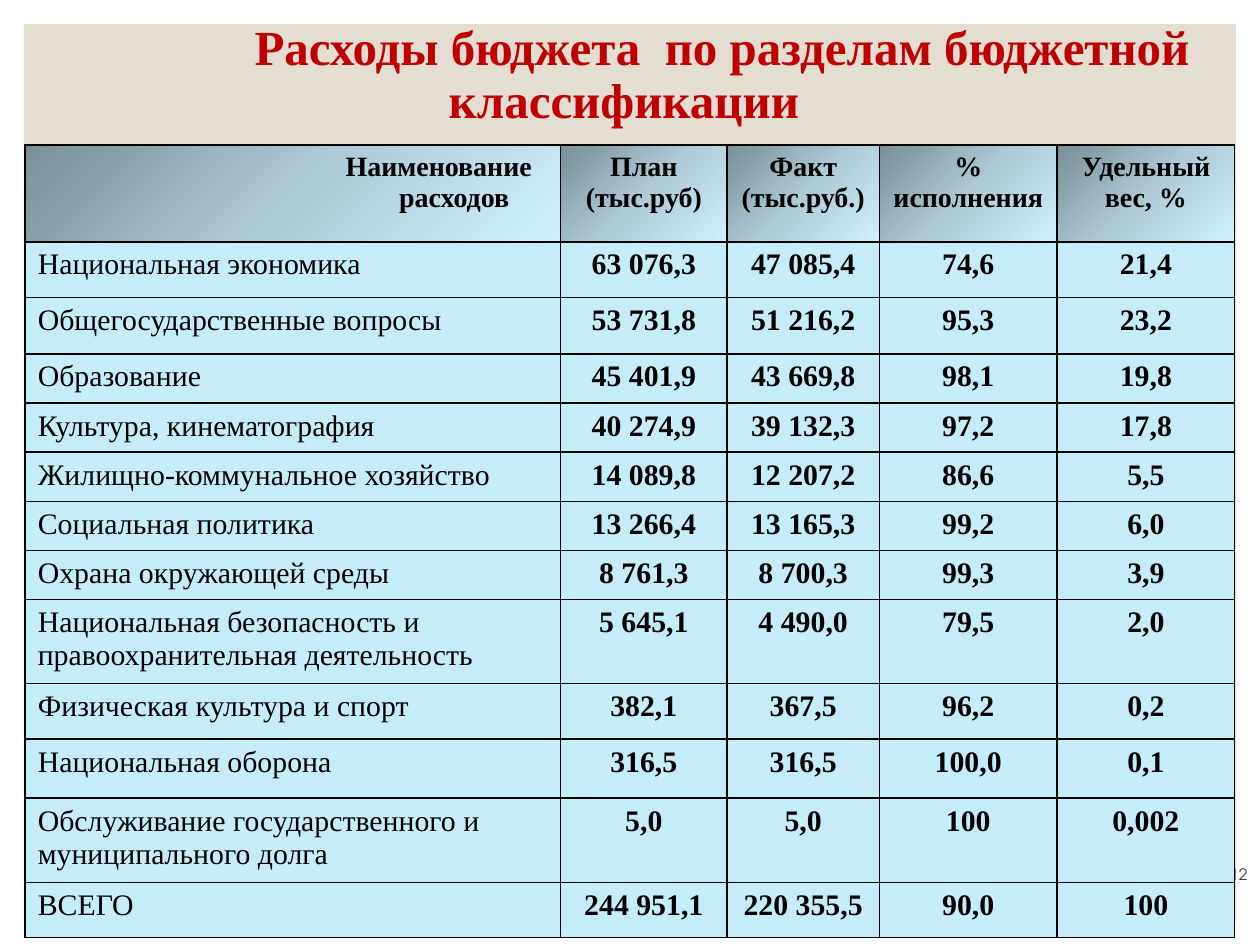
from lxml.etree import SubElement
from pptx import Presentation
from pptx.dml.color import RGBColor
from pptx.enum.shapes import MSO_SHAPE as Shape
from pptx.enum.text import MSO_ANCHOR as Anchor, MSO_AUTO_SIZE as AutoSize, PP_ALIGN as Align
from pptx.oxml.ns import qn
from pptx.util import Inches, Pt

SAND = RGBColor(0xE3, 0xDE, 0xD1)
RED = RGBColor(0xC0, 0x00, 0x00)
BLACK = RGBColor(0x00, 0x00, 0x00)
GREY = RGBColor(0x40, 0x40, 0x40)
ICE = RGBColor(0xC5, 0xED, 0xF8)
HEADER_STOPS = [(0, RGBColor(0x7A, 0x8E, 0x96)), (50, RGBColor(0xAE, 0xCA, 0xD5)),
                (100, RGBColor(0xCF, 0xF0, 0xFD))]
SERIF = "Times New Roman"

COLUMNS = [4.25, 1.32, 1.21, 1.41, 1.41]
ROWS = [0.77, 0.44, 0.45] + [0.39] * 5 + [0.63, 0.44, 0.47, 0.63, 0.44]
HEADER = ["Наименование \nрасходов", "План (тыс.руб)", "Факт\n(тыс.руб.)",
          "% исполнения", "Удельный вес, %"]
EXPENSES = [
    ["Национальная экономика", "63 076,3", "47 085,4", "74,6", "21,4"],
    ["Общегосударственные вопросы", "53 731,8", "51 216,2", "95,3", "23,2"],
    ["Образование", "45 401,9", "43 669,8", "98,1", "19,8"],
    ["Культура, кинематография", "40 274,9", "39 132,3", "97,2", "17,8"],
    ["Жилищно-коммунальное хозяйство", "14 089,8", "12 207,2", "86,6", "5,5"],
    ["Социальная политика", "13 266,4", "13 165,3", "99,2", "6,0"],
    ["Охрана окружающей среды", "8 761,3", "8 700,3", "99,3", "3,9"],
    ["Национальная безопасность и правоохранительная деятельность",
     "5 645,1", "4 490,0", "79,5", "2,0"],
    ["Физическая культура и спорт", "382,1", "367,5", "96,2", "0,2"],
    ["Национальная оборона", "316,5", "316,5", "100,0", "0,1"],
    ["Обслуживание государственного и муниципального долга", "5,0", "5,0", "100", "0,002"],
    ["ВСЕГО", "244 951,1", "220 355,5", "90,0", "100"],
]


def set_font(paragraph, name, size, color, bold):
    font = paragraph.font
    font.name, font.size, font.bold = name, Pt(size), bold
    font.color.rgb = color


def add_colour(parent, color):
    SubElement(parent, qn("a:srgbClr"), val=str(color))


prs = Presentation()
prs.slide_width, prs.slide_height = Inches(10), Inches(7.5)
slide = prs.slides.add_slide(prs.slide_layouts[5])

# Sand panel behind everything
panel = slide.shapes.add_shape(Shape.RECTANGLE, Inches(0.19), Inches(0.19),
                               Inches(9.62), Inches(7.12))
panel.shadow.inherit = False
panel.fill.solid()
panel.fill.fore_color.rgb = SAND
panel.line.fill.background()
slide.shapes._spTree.insert(2, panel._element)

# Title, with its first line indented
title = slide.shapes.title
title.left, title.top, title.width, title.height = 0, Inches(0.29), prs.slide_width, Inches(0.63)
heading = title.text_frame
heading.text = "Расходы бюджета  по разделам бюджетной классификации "
heading.auto_size = AutoSize.NONE
heading.word_wrap = True
heading.vertical_anchor = Anchor.MIDDLE
heading_line = heading.paragraphs[0]
heading_line.alignment = Align.CENTER
heading_line.line_spacing = 0.9
heading_line._p.get_or_add_pPr().set("indent", str(Inches(1.46)))
set_font(heading_line, SERIF, 28, RED, True)

# Page number, partly under the table edge
page = slide.shapes.add_textbox(Inches(9.17), Inches(6.66), Inches(0.83), Inches(0.4)).text_frame
page.text = "12"
page.word_wrap = True
page.vertical_anchor = Anchor.BOTTOM
page.paragraphs[0].alignment = Align.RIGHT
set_font(page.paragraphs[0], "TeX Gyre Adventor", 9, GREY, False)

# Expense table
budget = slide.shapes.add_table(len(ROWS), len(COLUMNS), Inches(0.2), Inches(1.15),
                                Inches(sum(COLUMNS)), Inches(sum(ROWS))).table
for column, width in zip(budget.columns, COLUMNS):
    column.width = Inches(width)
for row, height in zip(budget.rows, ROWS):
    row.height = Inches(height)

for r, texts in enumerate([HEADER] + EXPENSES):
    for c, text in enumerate(texts):
        cell = budget.cell(r, c)
        cell.text = text
        is_header, is_name = r == 0, r > 0 and c == 0
        for paragraph in cell.text_frame.paragraphs:
            paragraph.alignment = Align.LEFT if is_name else Align.CENTER
            set_font(paragraph, SERIF, 16 if is_header else 17, BLACK, not is_name)

        # Borders come before the fill in the cell properties
        props = cell._tc.get_or_add_tcPr()
        for side in ("a:lnL", "a:lnR", "a:lnT", "a:lnB"):
            border = SubElement(props, qn(side), w=str(Pt(1)))
            add_colour(SubElement(border, qn("a:solidFill")), BLACK)

        if is_header:
            gradient = SubElement(props, qn("a:gradFill"), rotWithShape="1")
            stops = SubElement(gradient, qn("a:gsLst"))
            for share, color in HEADER_STOPS:
                add_colour(SubElement(stops, qn("a:gs"), pos=str(share * 1000)), color)
            circle = SubElement(gradient, qn("a:path"), path="circle")
            SubElement(circle, qn("a:fillToRect"), r="100000", b="100000")
        else:
            cell.fill.solid()
            cell.fill.fore_color.rgb = ICE

# The first heading is pushed to the right of its cell
for paragraph, hang in zip(budget.cell(0, 0).text_frame.paragraphs, (-0.19, 0)):
    indents = paragraph._p.get_or_add_pPr()
    indents.set("marL", str(Inches(2.56)))
    indents.set("indent", str(Inches(hang)))

prs.save("out.pptx")
